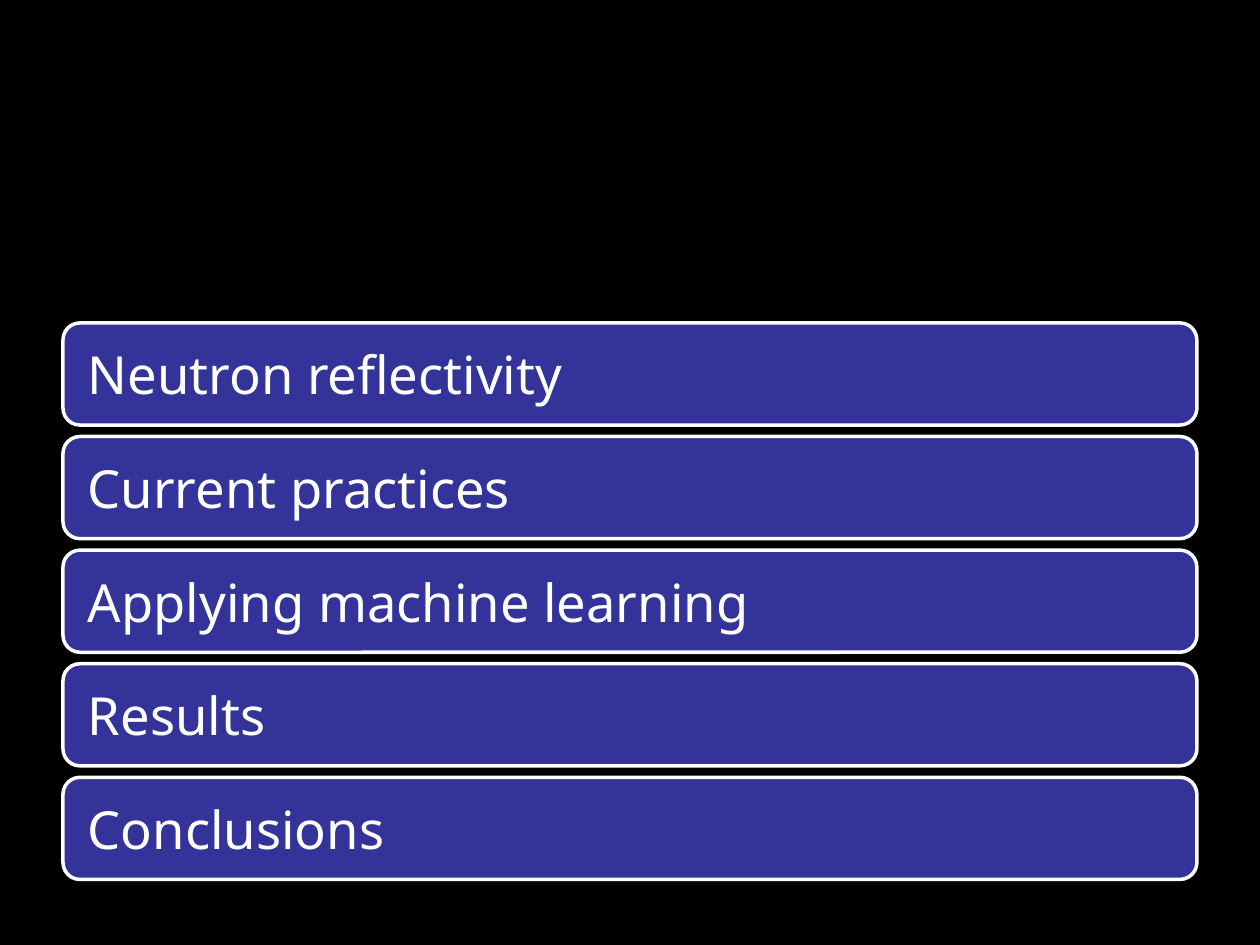
"""Build the talk outline slide with five stacked section bars."""
from pptx import Presentation
from pptx.dml.color import RGBColor
from pptx.enum.shapes import MSO_SHAPE
from pptx.enum.text import MSO_ANCHOR, PP_ALIGN
from pptx.util import Cm, Pt

BLACK = RGBColor(0x00, 0x00, 0x00)
INDIGO = RGBColor(0x33, 0x33, 0x99)
WHITE = RGBColor(0xFF, 0xFF, 0xFF)

SECTIONS = [
    "Neutron reflectivity",
    "Current practices",
    "Applying machine learning",
    "Results",
    "Conclusions",
]
TOP, PITCH = 6.51, 2.29
FRAME = {
    "word_wrap": True,
    "vertical_anchor": MSO_ANCHOR.MIDDLE,
    "margin_left": Cm(0.4),
    "margin_right": Cm(0.4),
    "margin_top": Cm(0.4),
    "margin_bottom": Cm(0.4),
}
FONT = {"name": "Noto Sans", "size": Pt(30)}

prs = Presentation()
prs.slide_width, prs.slide_height = Cm(25.4), Cm(19.05)
s = prs.slides.add_slide(prs.slide_layouts[6])
s.background.fill.solid()
s.background.fill.fore_color.rgb = BLACK

for i, section in enumerate(SECTIONS):
    sp = s.shapes.add_shape(
        MSO_SHAPE.ROUNDED_RECTANGLE, Cm(1.27), Cm(TOP + i * PITCH), Cm(22.86), Cm(2.06)
    )
    sp.shadow.inherit = False
    sp.fill.solid()
    sp.fill.fore_color.rgb = INDIGO
    sp.line.color.rgb = WHITE
    sp.line.width = Pt(2)

    tf = sp.text_frame
    for key, value in FRAME.items():
        setattr(tf, key, value)
    p = tf.paragraphs[0]
    p.alignment = PP_ALIGN.LEFT
    r = p.add_run()
    r.text = section
    for key, value in FONT.items():
        setattr(r.font, key, value)
    r.font.color.rgb = WHITE

prs.save("out.pptx")
